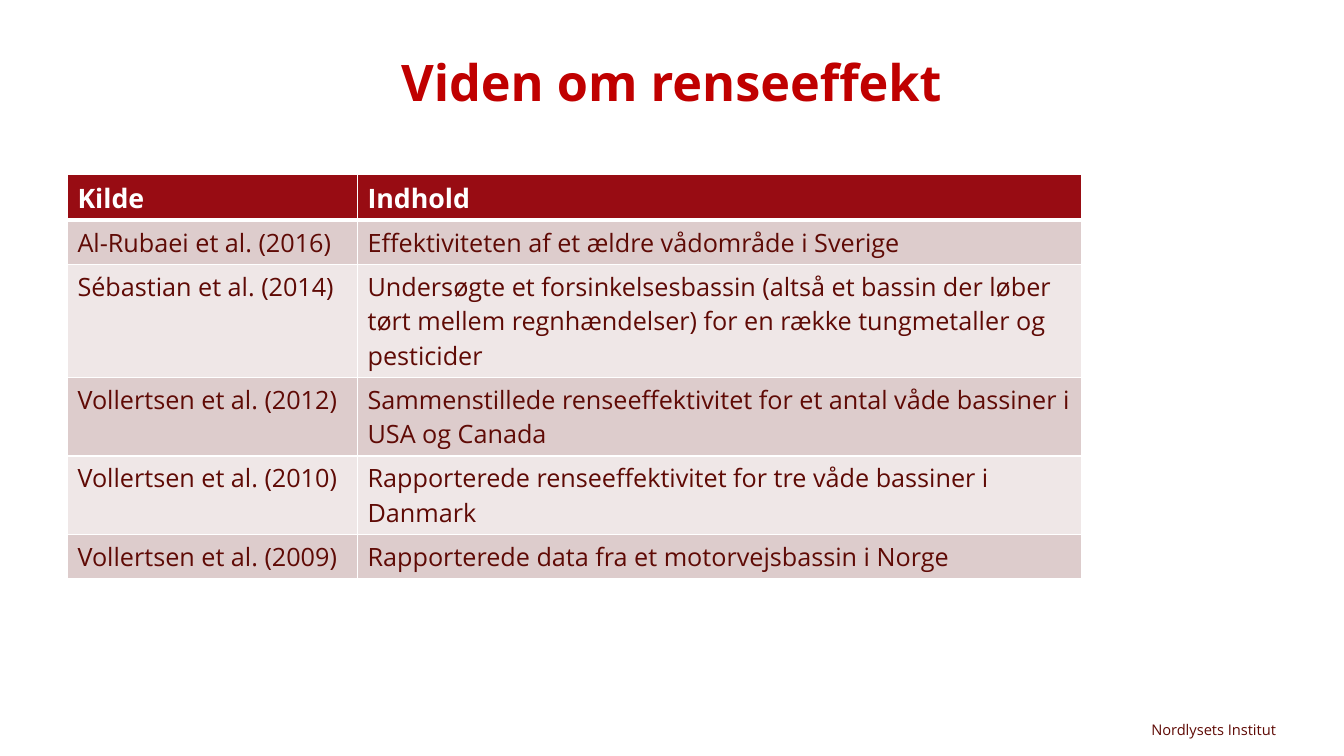
"""Builds a slide with a table of sources on treatment efficiency."""
import pptx
import pptx.dml.color
import pptx.enum.text
import pptx.oxml
import pptx.oxml.ns
import pptx.util

Cm = pptx.util.Cm
Pt = pptx.util.Pt
Align = pptx.enum.text.PP_ALIGN
Anchor = pptx.enum.text.MSO_ANCHOR


def color(value):
    return pptx.dml.color.RGBColor.from_string(value)


class SlideBuilder:
    font = "Open Sans"
    title_color = "C00000"
    text_color = "5F0A05"
    header_fill = "980C13"
    band_fills = ("DDCCCC", "EFE7E7")
    white = "FFFFFF"
    header_height = 1.15
    row_height = 1.12
    line_height = 0.86

    def __init__(self, deck):
        self.page = deck.slides.add_slide(deck.slide_layouts[6])

    def style(self, para, size, ink, bold=False):
        for span in para.runs:
            span.font.name = self.font
            span.font.size = Pt(size)
            span.font.bold = bold
            span.font.color.rgb = color(ink)

    def text(self, words, left, top, width, height, size, ink, align, anchor,
             bold=False, spacing=1.0, inset_top=0):
        box = self.page.shapes.add_textbox(Cm(left), Cm(top), Cm(width), Cm(height))
        frame = box.text_frame
        frame.word_wrap = True
        frame.vertical_anchor = anchor
        frame.margin_left = frame.margin_right = frame.margin_bottom = 0
        frame.margin_top = Cm(inset_top)
        frame.text = words
        para = frame.paragraphs[0]
        para.alignment = align
        para.line_spacing = spacing
        self.style(para, size, ink, bold)

    def borders(self, cell, top, bottom):
        properties = cell._tc.get_or_add_tcPr()
        widths = {"lnL": 1, "lnR": 1, "lnT": top, "lnB": bottom}
        for index, (side, width) in enumerate(widths.items()):
            line = pptx.oxml.parse_xml(
                f'<a:{side} {pptx.oxml.ns.nsdecls("a")} w="{Pt(width)}">'
                f'<a:solidFill><a:srgbClr val="{self.white}"/></a:solidFill></a:{side}>')
            properties.insert(index, line)

    def table(self, rows, left, top, widths):
        heights = [self.row_height + self.line_height * (lines - 1) for *_, lines in rows]
        heights[0] = self.header_height
        grid = self.page.shapes.add_table(
            len(rows), len(widths), Cm(left), Cm(top),
            Cm(sum(widths)), Cm(sum(heights))).table
        for column, width in zip(grid.columns, widths):
            column.width = Cm(width)
        for row_index, (*row, _) in enumerate(rows):
            grid.rows[row_index].height = Cm(heights[row_index])
            header = row_index == 0
            fill = self.header_fill if header else self.band_fills[(row_index - 1) % 2]
            for column_index, words in enumerate(row):
                cell = grid.cell(row_index, column_index)
                cell.text_frame.text = words
                cell.fill.solid()
                cell.fill.fore_color.rgb = color(fill)
                self.style(cell.text_frame.paragraphs[0], 19.1 if header else 18,
                           self.white if header else self.text_color, header)
                self.borders(cell, 3 if row_index == 1 else 1, 3 if header else 1)


def main():
    deck = pptx.Presentation()
    deck.slide_width = Cm(33.87)
    deck.slide_height = Cm(19.05)
    slide = SlideBuilder(deck)
    slide.text("Nordlysets Institut", 28.32, 18.01, 3.84, 0.61, 10.5,
               slide.text_color, Align.RIGHT, Anchor.BOTTOM, inset_top=0.13)
    slide.text("Viden om renseeffekt", 1.7, 0.84, 30.45, 2.62, 36,
               slide.title_color, Align.CENTER, Anchor.MIDDLE, bold=True, spacing=0.9)
    sources = [
        ("Kilde", "Indhold", 1),
        ("Al-Rubaei et al. (2016)", "Effektiviteten af et ældre vådområde i Sverige", 1),
        ("Sébastian et al. (2014)",
         "Undersøgte et forsinkelsesbassin (altså et bassin der løber tørt mellem "
         "regnhændelser) for en række tungmetaller og pesticider", 3),
        ("Vollertsen et al. (2012)",
         "Sammenstillede renseeffektivitet for et antal våde bassiner i USA og Canada", 2),
        ("Vollertsen et al. (2010)",
         "Rapporterede renseeffektivitet for tre våde bassiner i Danmark", 2),
        ("Vollertsen et al. (2009)", "Rapporterede data fra et motorvejsbassin i Norge", 1),
    ]
    slide.table(sources, 1.7, 4.4, (7.31, 18.25))
    deck.save("out.pptx")


if __name__ == "__main__":
    main()
